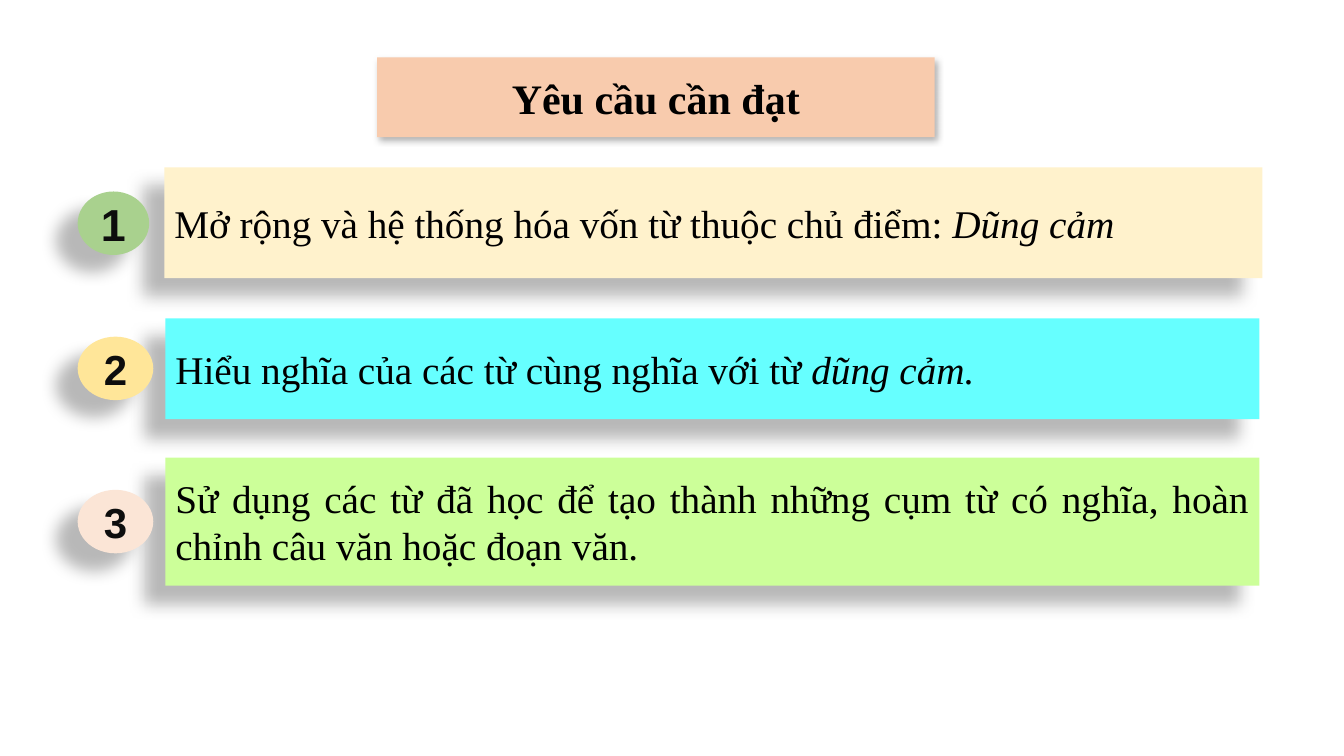
from lxml.etree import SubElement
from pptx import Presentation
from pptx.dml.color import RGBColor
from pptx.enum.shapes import MSO_SHAPE
from pptx.enum.text import MSO_ANCHOR, PP_ALIGN
from pptx.oxml.ns import qn
from pptx.util import Inches, Pt

COLORS = {
    "title": "F8CBAD", "text": "000000", "number": "0D0D0D", "shadow": "000000",
    "cream": "FFF2CC", "cyan": "66FFFF", "lime": "CCFF99",
    "green": "A9D18E", "yellow": "FFE699", "pink": "FBE5D6",
}
TITLE_SHADOW = {"opacity": 30, "blur": 4.5, "dist": 2.6, "angle": 53}
GOAL_SHADOW = {"opacity": 28, "blur": 11.8, "dist": 19.7, "angle": 141}
TITLE_FONT = {"name": "Times New Roman", "size": Pt(30), "bold": True}
GOAL_FONT = {"name": "Times New Roman", "size": Pt(28), "bold": False}
NUMBER_FONT = {"name": "Arial", "bold": True}

GOALS = [
    {"box": (0.77, 1.66, 11.75, 1.1), "indent": 0.86, "fill": "cream",
     "text": "Mở rộng và hệ thống hóa vốn từ thuộc chủ điểm: ", "italic": "Dũng cảm",
     "badge": "green", "badge_top": 0.24, "badge_width": 0.71, "number_size": 32},
    {"box": (0.77, 3.16, 11.72, 1), "indent": 0.87, "fill": "cyan",
     "text": "Hiểu nghĩa của các từ cùng nghĩa với từ ", "italic": "dũng cảm.",
     "badge": "yellow", "badge_top": 0.18, "badge_width": 0.75, "number_size": 30},
    {"box": (0.77, 4.54, 11.72, 1.27), "indent": 0.87, "fill": "lime",
     "text": "Sử dụng các từ đã học để tạo thành những cụm từ có nghĩa, "
             "hoàn chỉnh câu văn hoặc đoạn văn.", "italic": "",
     "badge": "pink", "badge_top": 0.32, "badge_width": 0.75, "number_size": 30},
]


def style_shape(sp, fill, shadow):
    """Give a shape a plain fill, no line and an offset shadow."""
    sp.fill.solid()
    sp.fill.fore_color.rgb = RGBColor.from_string(COLORS[fill])
    sp.line.fill.background()
    sp.shadow.inherit = False
    effects = sp._element.spPr.find(qn("a:effectLst"))
    outer = SubElement(effects, qn("a:outerShdw"), {
        "blurRad": str(Pt(shadow["blur"])), "dist": str(Pt(shadow["dist"])),
        "dir": str(shadow["angle"] * 60000), "algn": "ctr", "rotWithShape": "0"})
    color = SubElement(outer, qn("a:srgbClr"), val=COLORS["shadow"])
    SubElement(color, qn("a:alpha"), val=str(shadow["opacity"] * 1000))


def write_text(sp, runs, align, color, font):
    """Write one paragraph of (text, italic) runs, centred vertically."""
    tf = sp.text_frame
    tf.word_wrap = True
    tf.vertical_anchor = MSO_ANCHOR.MIDDLE
    p = tf.paragraphs[0]
    p.alignment = align
    for text, italic in runs:
        r = p.add_run()
        r.text = text
        for name, value in {**font, "italic": italic}.items():
            setattr(r.font, name, value)
        r.font.color.rgb = RGBColor.from_string(COLORS[color])


def add_title(s, left, top, width, height):
    """Turn the title placeholder into a rounded banner in the given box."""
    sp = s.shapes.title
    box = {"left": left, "top": top, "width": width, "height": height}
    for name, value in box.items():
        setattr(sp, name, Inches(value))
    geometry = SubElement(sp._element.spPr, qn("a:prstGeom"), prst="roundRect")
    SubElement(geometry, qn("a:avLst"))
    style_shape(sp, "title", TITLE_SHADOW)
    write_text(sp, [("Yêu cầu cần đạt", False)], PP_ALIGN.CENTER, "text", TITLE_FONT)


def add_goal(s, number, goal):
    """Group a goal's text bar with its numbered badge inside the goal's box."""
    left, top, width, height = goal["box"]
    indent = goal["indent"]
    group = s.shapes.add_group_shape()
    bar = group.shapes.add_shape(
        MSO_SHAPE.RECTANGLE, Inches(left + indent), Inches(top),
        Inches(width - indent), Inches(height))
    style_shape(bar, goal["fill"], GOAL_SHADOW)
    runs = [(goal["text"], False)]
    if goal["italic"]:
        runs.append((goal["italic"], True))
    write_text(bar, runs, PP_ALIGN.JUSTIFY, "text", GOAL_FONT)

    badge = group.shapes.add_shape(
        MSO_SHAPE.OVAL, Inches(left), Inches(top + goal["badge_top"]),
        Inches(goal["badge_width"]), Inches(0.63))
    style_shape(badge, goal["badge"], GOAL_SHADOW)
    write_text(badge, [(str(number), False)], PP_ALIGN.CENTER, "number",
               {**NUMBER_FONT, "size": Pt(goal["number_size"])})


def main():
    """Build the slide of lesson goals."""
    prs = Presentation()
    prs.slide_width, prs.slide_height = Inches(13.33), Inches(7.5)
    s = prs.slides.add_slide(prs.slide_layouts[5])
    add_title(s, 3.74, 0.57, 5.53, 0.79)
    for number, goal in enumerate(GOALS, 1):
        add_goal(s, number, goal)
    prs.save("out.pptx")


if __name__ == "__main__":
    main()
